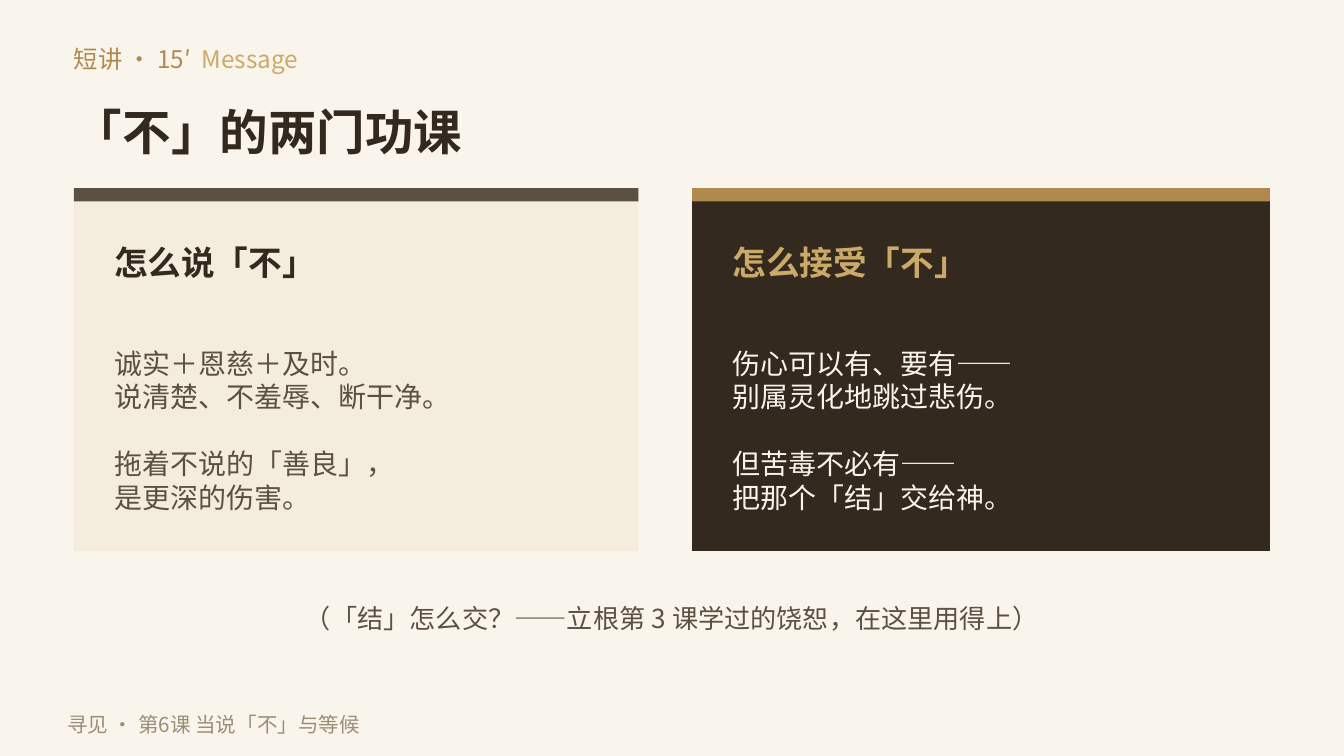
from lxml import etree
from pptx import Presentation
from pptx import util as u
from pptx.dml.color import RGBColor
from pptx.enum import shapes, text
from pptx.oxml.ns import qn

PX = 4572  # 200 px to the inch
FONT = "Noto Sans CJK SC"
COLORS = {
    "paper": "FAF5EC",
    "cream": "F4ECDD",
    "dark": "33291E",
    "brown": "5C5043",
    "bronze": "B0894F",
    "gold": "CBA968",
    "muted": "9C8E76",
}
CARD_TOP, CARD_HEIGHT, BAR_HEIGHT, PADDING = 280, 540, 20, 60


def color(name):
    return RGBColor.from_string(COLORS[name])


def box(*lengths):
    return [length * PX for length in lengths]


def add_rectangle(slide, bounds, fill):
    shape = slide.shapes.add_shape(shapes.MSO_SHAPE.RECTANGLE, *box(*bounds))
    shape.shadow.inherit = False
    shape.fill.solid()
    shape.fill.fore_color.rgb = color(fill)
    shape.line.fill.background()


def add_run(paragraph, words, size, fill, bold=False):
    run = paragraph.add_run()
    run.text = words
    font = run.font
    font.name, font.size, font.bold = FONT, u.Pt(size), bold
    font.color.rgb = color(fill)
    latin = font._element.find(qn("a:latin"))
    east_asian = etree.Element(qn("a:ea"), typeface=FONT)
    latin.addnext(east_asian)


def prepare_frame(shape):
    frame = shape.text_frame
    frame.margin_left = frame.margin_top = frame.margin_right = frame.margin_bottom = 0
    frame.vertical_anchor = text.MSO_ANCHOR.MIDDLE
    frame.auto_size = text.MSO_AUTO_SIZE.NONE
    frame.word_wrap = True
    return frame


def add_text(slide, bounds):
    """Add an empty text box and return its frame."""
    return prepare_frame(slide.shapes.add_textbox(*box(*bounds)))


def add_line(slide, bounds, words, size, fill, bold=False, align=text.PP_ALIGN.LEFT):
    paragraph = add_text(slide, bounds).paragraphs[0]
    paragraph.alignment = align
    add_run(paragraph, words, size, fill, bold)


def set_title(slide, bounds, words):
    title = slide.shapes.title
    title.left, title.top, title.width, title.height = box(*bounds)
    paragraph = prepare_frame(title).paragraphs[0]
    paragraph.alignment = text.PP_ALIGN.LEFT
    add_run(paragraph, words, 26, "dark", True)


def add_card(slide, left, width, fills, heading, stanzas):
    """fills: card, top bar, heading and body colours."""
    card, bar, heading_fill, body_fill = fills
    add_rectangle(slide, (left, CARD_TOP, width, CARD_HEIGHT), card)
    add_rectangle(slide, (left, CARD_TOP, width, BAR_HEIGHT), bar)
    inner_left, inner_width = left + PADDING, width - 2 * PADDING
    add_line(slide, (inner_left, 350, inner_width, 80), heading, 18, heading_fill, True)
    frame = add_text(slide, (inner_left, 470, inner_width, 340))
    paragraph = frame.paragraphs[0]
    for stanza_index, stanza in enumerate(stanzas):
        for line_index, words in enumerate(stanza):
            if stanza_index or line_index:
                paragraph = frame.add_paragraph()
            if stanza_index and not line_index:
                paragraph.space_before = u.Pt(18)
            add_run(paragraph, words, 15, body_fill)


def main():
    presentation = Presentation()
    presentation.slide_width, presentation.slide_height = box(2000, 1125)
    slide = presentation.slides.add_slide(presentation.slide_layouts[5])
    slide.background.fill.solid()
    slide.background.fill.fore_color.rgb = color("paper")

    label = add_text(slide, (110, 56, 1700, 64)).paragraphs[0]
    add_run(label, "短讲 · 15′  ", 13, "bronze")
    add_run(label, "Message", 13, "gold")
    set_title(slide, (110, 150, 1800, 90), "「不」的两门功课")

    add_card(slide, 110, 840, ("cream", "brown", "dark", "brown"), "怎么说「不」", [
        ("诚实＋恩慈＋及时。", "说清楚、不羞辱、断干净。"),
        ("拖着不说的「善良」，", "是更深的伤害。"),
    ])
    add_card(slide, 1030, 860, ("dark", "bronze", "gold", "paper"), "怎么接受「不」", [
        ("伤心可以有、要有——", "别属灵化地跳过悲伤。"),
        ("但苦毒不必有——", "把那个「结」交给神。"),
    ])

    add_line(slide, (110, 880, 1780, 80), "（「结」怎么交？——立根第 3 课学过的饶恕，在这里用得上）",
             14, "brown", align=text.PP_ALIGN.CENTER)
    add_line(slide, (100, 1050, 1500, 56), "寻见 · 第6课 当说「不」与等候", 11, "muted")
    presentation.save("out.pptx")


if __name__ == "__main__":
    main()
